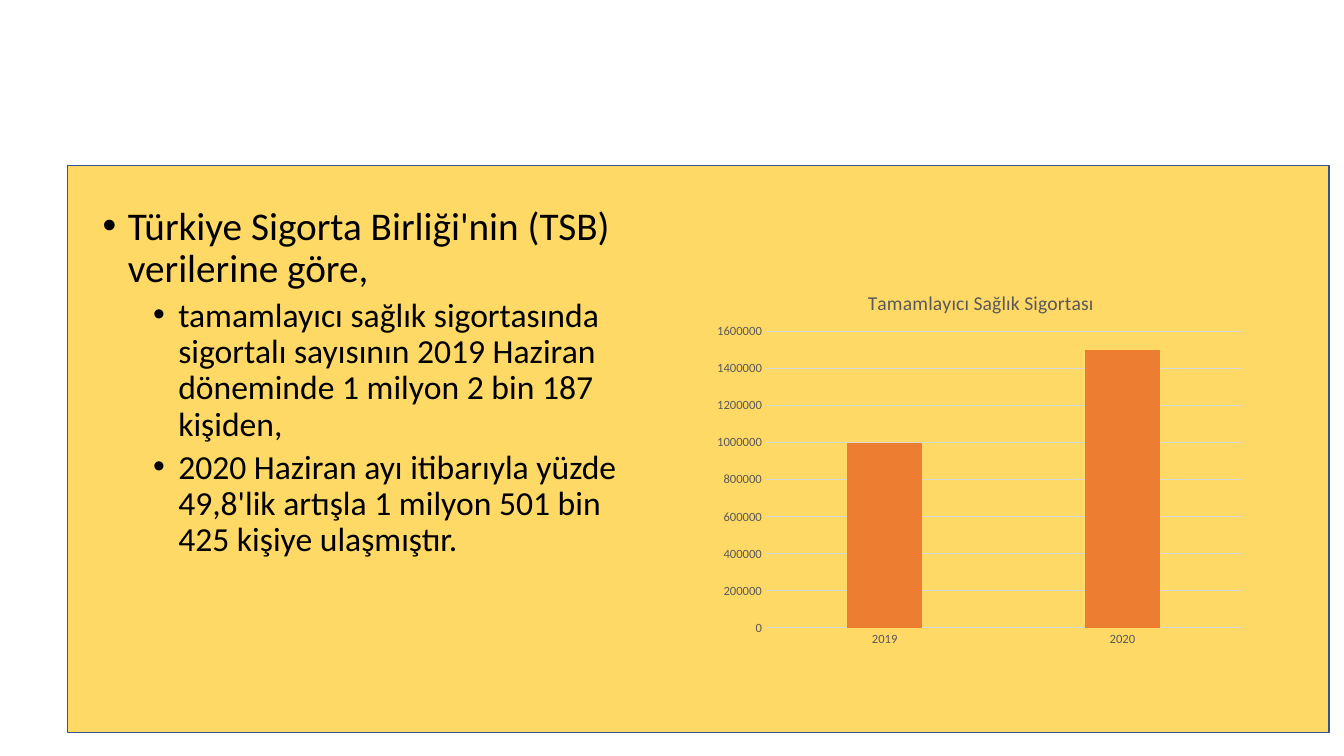
"""Builds the slide on supplementary health insurance with its bullets and column chart."""
from lxml import etree
from pptx import Presentation
from pptx.chart.data import CategoryChartData
from pptx.dml.color import RGBColor
from pptx.enum.chart import XL_CHART_TYPE, XL_TICK_MARK
from pptx.enum.shapes import MSO_SHAPE
from pptx.oxml import parse_xml
from pptx.oxml.ns import nsdecls, qn
from pptx.util import Pt

COLUMNS = XL_CHART_TYPE.COLUMN_CLUSTERED
NO_TICK = XL_TICK_MARK.NONE
RECTANGLE = MSO_SHAPE.RECTANGLE
PX = 9144
FONT = "Calibri"
COLORS = {
    "panel": "FFD966",
    "border": "325491",
    "text": "000000",
    "chart_text": "595959",
    "grid": "D9D9D9",
    "bar": "ED7D31",
}


def px(*lengths):
    return [length * PX for length in lengths]


def write(paragraph, text, size, color="text", indent=None, before=0):
    if indent is not None:
        properties = paragraph._p.get_or_add_pPr()
        properties.set("marL", str(indent * PX))
        properties.set("indent", str(-25 * PX))
        etree.SubElement(properties, qn("a:buFont")).set("typeface", "Arial")
        etree.SubElement(properties, qn("a:buChar")).set("char", "•")
        paragraph.line_spacing = 0.9
        paragraph.space_before = Pt(before)
    run = paragraph.add_run()
    run.text = text
    run.font.name = FONT
    run.font.size = Pt(size)
    run.font.bold = False
    run.font.color.rgb = RGBColor.from_string(COLORS[color])


presentation = Presentation()
presentation.slide_width, presentation.slide_height = px(1333, 750)
slide = presentation.slides.add_slide(presentation.slide_layouts[6])

panel = slide.shapes.add_shape(RECTANGLE, *px(67, 164, 1251, 563))
panel.shadow.inherit = False
panel.fill.solid()
panel.fill.fore_color.rgb = RGBColor.from_string(COLORS["panel"])
panel.line.color.rgb = RGBColor.from_string(COLORS["border"])
panel.line.width = Pt(1)

bullets = [
    ("Türkiye Sigorta Birliği'nin (TSB) verilerine göre,", 28, 25, 0),
    ("tamamlayıcı sağlık sigortasında sigortalı sayısının 2019 Haziran "
     "döneminde 1 milyon 2 bin 187 kişiden,", 24, 75, 5),
    ("2020 Haziran ayı itibarıyla yüzde 49,8'lik artışla 1 milyon 501 bin "
     "425 kişiye ulaşmıştır.", 24, 75, 5),
]
body = slide.shapes.add_textbox(*px(92, 200, 567, 476)).text_frame
body.word_wrap = True
for index, (text, size, indent, before) in enumerate(bullets):
    paragraph = body.add_paragraph() if index else body.paragraphs[0]
    paragraph.level = 1 if index else 0
    write(paragraph, text, size, indent=indent, before=before)

chart_data = CategoryChartData()
chart_data.categories = ["2019", "2020"]
chart_data.add_series("Series 1", [1000000, 1500000])
chart = slide.shapes.add_chart(COLUMNS, *px(700, 264, 542, 382), chart_data).chart
chart.font.name = FONT
chart.font.size = Pt(10)
chart.has_legend = False
chart.has_title = True
write(chart.chart_title.text_frame.paragraphs[0], "Tamamlayıcı Sağlık Sigortası",
      14, "chart_text")
chart.chart_title.include_in_layout = False

plot = chart.plots[0]
plot.gap_width = 219
plot.overlap = -27
plot.vary_by_categories = False
bars = plot.series[0].format.fill
bars.solid()
bars.fore_color.rgb = RGBColor.from_string(COLORS["bar"])

for axis in (chart.category_axis, chart.value_axis):
    axis.major_tick_mark = NO_TICK
    axis.minor_tick_mark = NO_TICK
    axis.tick_labels.font.name = FONT
    axis.tick_labels.font.size = Pt(9)
    axis.tick_labels.font.color.rgb = RGBColor.from_string(COLORS["chart_text"])
chart.value_axis.minimum_scale = 0
chart.value_axis.maximum_scale = 1600000
chart.value_axis.major_unit = 200000
chart.value_axis.format.line.fill.background()
for line in (chart.category_axis.format.line, chart.value_axis.major_gridlines.format.line):
    line.color.rgb = RGBColor.from_string(COLORS["grid"])
    line.width = Pt(0.75)

plot_area = chart._chartSpace.chart.plotArea
for layout in plot_area.findall(qn("c:layout")):
    plot_area.remove(layout)
plot_area.insert(0, parse_xml(
    f'<c:layout {nsdecls("c")}><c:manualLayout><c:layoutTarget val="inner"/>'
    '<c:xMode val="edge"/><c:yMode val="edge"/><c:x val="0.11"/><c:y val="0.17"/>'
    '<c:w val="0.87"/><c:h val="0.77"/></c:manualLayout></c:layout>'))
title = chart.chart_title._element
for layout in title.findall(qn("c:layout")):
    title.remove(layout)
title.find(qn("c:tx")).addnext(parse_xml(
    f'<c:layout {nsdecls("c")}><c:manualLayout><c:xMode val="edge"/><c:yMode val="edge"/>'
    '<c:x val="0.29"/><c:y val="0.05"/></c:manualLayout></c:layout>'))

presentation.save("out.pptx")
